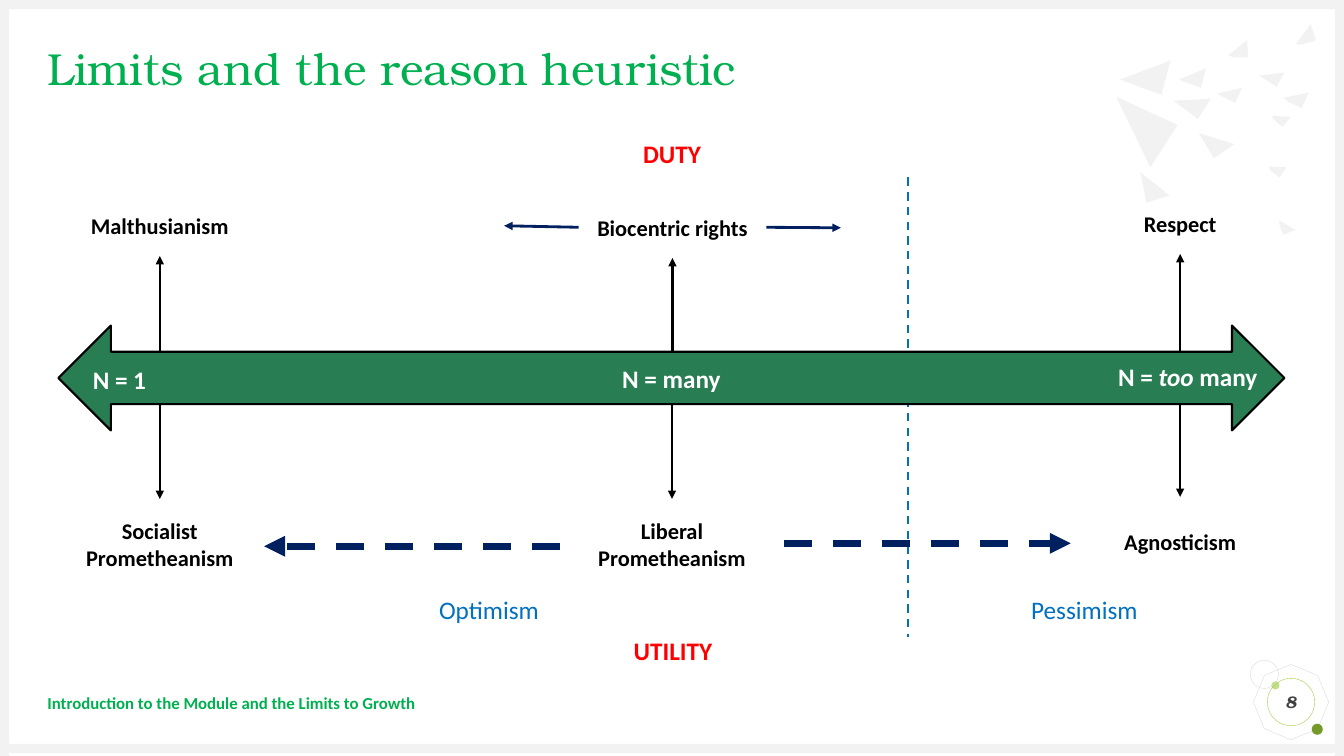
from dataclasses import dataclass

from lxml.etree import SubElement
from pptx import Presentation
from pptx.dml.color import RGBColor
from pptx.enum.dml import MSO_LINE_DASH_STYLE as Dash
from pptx.enum.shapes import MSO_CONNECTOR, MSO_SHAPE as Shape
from pptx.enum.text import MSO_ANCHOR as Anchor, PP_ALIGN as Align
from pptx.oxml.ns import qn
from pptx.util import Inches, Pt


@dataclass(frozen=True)
class Theme:
    heading_font: str = "TeX Gyre Bonum"
    body_font: str = "Calibri"
    heading: str = "00B050"
    spectrum: str = "297D53"
    pole: str = "FF0000"
    outlook: str = "0070C0"
    drift: str = "002060"
    ink: str = "000000"
    paper: str = "FFFFFF"
    number: str = "404040"
    ring: str = "9ACB39"
    dot_light: str = "C2E088"
    dot_dark: str = "749A29"
    pale: str = "F2F2F2"
    outline: str = "D9D9D9"
    title_size: int = 32
    large: int = 18
    medium: int = 16
    small: int = 12


THEME = Theme()
WIDTH, HEIGHT, BORDER = 13.33, 7.5, 0.09

TITLE = "Limits and the reason heuristic"
FOOTER = "Introduction to the Module and the Limits to Growth"
SLIDE_NUMBER = "8"
SPECTRUM_BOX = (0.58, 3.23, 12.16, 1.04)

# Each position on the spectrum: label and box above, label and box below
POSITIONS = [
    (("Malthusianism", (0.76, 1.93, 1.65, 0.61)),
     ("Socialist Prometheanism", (0.67, 4.95, 1.83, 0.89))),
    (("Biocentric rights", (5.74, 1.95, 1.86, 0.61)),
     ("Liberal Prometheanism", (5.75, 4.95, 1.83, 0.89))),
    (("Respect", (10.88, 1.91, 1.65, 0.61)),
     ("Agnosticism", (10.79, 4.93, 1.83, 0.89))),
]
# Asterisks enclose italics
END_COUNTS = [("N = 1", (0.92, 3.61, 0.78, 0.26)),
              ("N = *too *many", (11.09, 3.58, 1.66, 0.26))]
POLES = [("DUTY", (5.55, 1.18, 2.23, 0.69)), ("UTILITY", (5.56, 6.11, 2.23, 0.69))]
OUTLOOKS = [("Optimism", (0.92, 5.85, 7.86, 0.4)), ("Pessimism", (8.77, 5.85, 3.97, 0.4))]
DIVIDER = ((9.01, 1.76), (9.01, 6.32))
PROMETHEAN_DRIFTS = [((5.55, 5.42), (2.62, 5.42)), ((7.78, 5.39), (10.62, 5.39))]
RIGHTS_DRIFTS = [(1, (5, 2.24)), (3, (8.34, 2.26))]

SHARDS = [
    [(11.61, 0.6), (11.52, 0.94), (11.11, 0.79)],
    [(12.01, 0.98), (11.88, 1.18), (11.64, 1)],
    [(11.96, 0.68), (11.91, 0.87), (11.69, 0.79)],
    [(12.32, 0.87), (12.25, 1.02), (12.07, 0.93)],
    [(12.37, 0.4), (12.38, 0.57), (12.24, 0.57), (12.18, 0.55)],
    [(12.8, 1.16), (12.72, 1.26), (12.64, 1.19), (12.61, 1.15)],
    [(13, 0.24), (13.05, 0.4), (12.92, 0.44), (12.85, 0.44)],
    [(12.74, 0.72), (12.66, 0.86), (12.49, 0.75)],
    [(12.98, 0.92), (12.91, 1.07), (12.78, 1.01), (12.73, 0.97)],
    [(11.68, 1.24), (11.41, 1.66), (11.07, 0.96)],
    [(12.24, 1.43), (12.04, 1.57), (11.89, 1.32)],
    [(12.76, 1.66), (12.69, 1.76), (12.6, 1.69), (12.58, 1.65)],
    [(11.6, 1.94), (11.37, 2.01), (11.31, 1.71)],
    [(12.85, 2.28), (12.73, 2.33), (12.69, 2.23), (12.69, 2.19)],
]


def inches(values):
    return [Inches(value) for value in values]


def paint(shape, fill=None, line=None, weight=0.25):
    shape.shadow.inherit = False
    if fill:
        shape.fill.solid()
        shape.fill.fore_color.rgb = RGBColor.from_string(fill)
    else:
        shape.fill.background()
    if line:
        shape.line.color.rgb = RGBColor.from_string(line)
        shape.line.width = Pt(weight)
    else:
        shape.line.fill.background()
    return shape


def add_preset(slide, preset, box, **colours):
    return paint(slide.shapes.add_shape(preset, *inches(box)), **colours)


def add_shard(slide, corners):
    first, *others = [inches(corner) for corner in corners]
    builder = slide.shapes.build_freeform(*first, scale=1.0)
    builder.add_line_segments(others, close=True)
    paint(builder.convert_to_shape(), fill=THEME.pale)


def write(shape, text, size, colour, bold=True, italic=None, font=THEME.body_font,
          align=Align.CENTER, anchor=Anchor.MIDDLE, inset=True):
    """Fill a shape with one paragraph; asterisks in the text switch italics."""
    frame = shape.text_frame
    frame.word_wrap = True
    frame.vertical_anchor = anchor
    if not inset:
        frame.margin_left = frame.margin_right = 0
        frame.margin_top = frame.margin_bottom = 0
    paragraph = frame.paragraphs[0]
    paragraph.alignment = align
    for index, part in enumerate(text.split("*")):
        run = paragraph.add_run()
        run.text = part
        if index % 2:
            run.font.italic = True
    style = paragraph.font
    style.name, style.size = font, Pt(size)
    style.bold, style.italic = bold, italic
    style.color.rgb = RGBColor.from_string(colour)
    return paragraph


def add_label(slide, text, box, size, colour, **options):
    label = slide.shapes.add_textbox(*inches(box))
    write(label, text, size, colour, **options)
    return label


def add_line(slide, start, end, colour, weight, dashed=False, arrow=True):
    line = slide.shapes.add_connector(MSO_CONNECTOR.STRAIGHT, *inches(start + end))
    line.line.color.rgb = RGBColor.from_string(colour)
    line.line.width = Pt(weight)
    if dashed:
        line.line.dash_style = Dash.DASH
    if arrow:
        SubElement(line.line._get_or_add_ln(), qn("a:tailEnd"), type="triangle")
    SubElement(line._element.spPr, qn("a:effectLst"))
    return line


def add_backdrop(slide):
    add_preset(slide, Shape.OCTAGON, (12.46, 6.62, 0.69, 0.69), line=THEME.outline).rotation = 22.7
    add_preset(slide, Shape.OVAL, (12.61, 6.76, 0.08, 0.08), fill=THEME.dot_light)
    add_preset(slide, Shape.OVAL, (13.01, 7.18, 0.11, 0.11), fill=THEME.dot_dark)
    add_preset(slide, Shape.OVAL, (12.4, 6.55, 0.28, 0.28), line=THEME.outline)
    for box in [(0, HEIGHT - 0.12, WIDTH, BORDER), (0, 0, WIDTH, BORDER),
                (0, 0, BORDER, HEIGHT), (WIDTH - BORDER, 0, BORDER, HEIGHT)]:
        add_preset(slide, Shape.RECTANGLE, box, fill=THEME.pale)
    for corners in SHARDS:
        add_shard(slide, corners)


def add_frame_text(slide):
    title = slide.shapes.title
    title.left, title.top, title.width, title.height = inches((0.47, 0.47, 12.4, 0.47))
    write(title, TITLE, THEME.title_size, THEME.heading, bold=False,
          font=THEME.heading_font, align=Align.LEFT, inset=False).line_spacing = 0.9
    add_label(slide, FOOTER, (0.47, 6.77, 9.61, 0.4), THEME.small, THEME.heading,
              align=Align.LEFT, inset=False)
    badge = add_preset(slide, Shape.OVAL, (12.57, 6.73, 0.47, 0.47), line=THEME.ring)
    write(badge, SLIDE_NUMBER, THEME.small, THEME.number, italic=True,
          font=THEME.heading_font, inset=False)


def add_spectrum(slide):
    add_line(slide, *DIVIDER, THEME.outlook, 1.5, dashed=True, arrow=False)
    spectrum = add_preset(slide, Shape.LEFT_RIGHT_ARROW, SPECTRUM_BOX,
                          fill=THEME.spectrum, line=THEME.ink, weight=1.5)
    write(spectrum, "N = many", THEME.large, THEME.paper).space_after = Pt(10)
    for text, box in END_COUNTS:
        add_label(slide, text, box, THEME.large, THEME.paper,
                  align=Align.LEFT, anchor=Anchor.TOP, inset=False)


def add_positions(slide):
    _, top, _, height = SPECTRUM_BOX
    shaft_edges = (top + height / 4, top + height * 3 / 4)
    for position in POSITIONS:
        for (text, box), edge, site in zip(position, shaft_edges, (2, 0)):
            label = add_label(slide, text, box, THEME.medium, THEME.ink)
            center = box[0] + box[2] / 2
            stem = add_line(slide, (center, edge), (center, box[1]), THEME.ink, 1.5)
            stem.end_connect(label, site)
            if text == "Biocentric rights":
                for side, tip in RIGHTS_DRIFTS:
                    add_line(slide, tip, tip, THEME.drift, 2).begin_connect(label, side)


def main():
    deck = Presentation()
    deck.slide_width, deck.slide_height = inches((WIDTH, HEIGHT))
    slide = deck.slides.add_slide(deck.slide_layouts[5])
    add_backdrop(slide)
    add_frame_text(slide)
    add_spectrum(slide)
    add_positions(slide)
    for start, end in PROMETHEAN_DRIFTS:
        add_line(slide, start, end, THEME.drift, 5, dashed=True)
    for text, box in POLES:
        add_label(slide, text, box, THEME.large, THEME.pole, inset=False)
    for text, box in OUTLOOKS:
        add_label(slide, text, box, THEME.large, THEME.outlook, bold=False, anchor=Anchor.TOP)
    deck.save("out.pptx")


if __name__ == "__main__":
    main()
